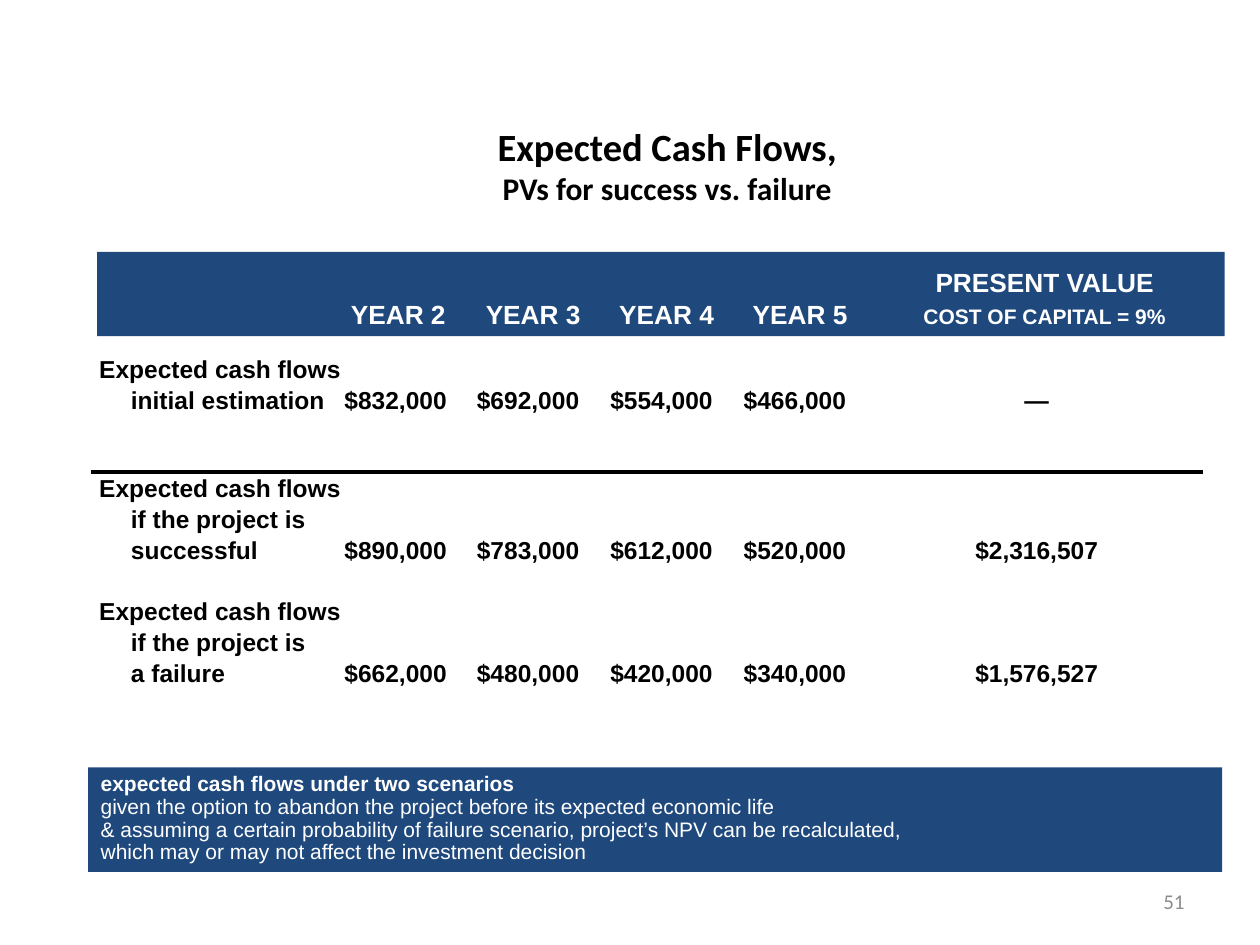
from lxml import etree
from pptx import Presentation
from pptx.dml.color import RGBColor
from pptx.enum.shapes import MSO_CONNECTOR, MSO_SHAPE
from pptx.enum.text import MSO_ANCHOR, PP_ALIGN
from pptx.oxml.ns import qn
from pptx.util import Cm, Pt

RECTANGLE, STRAIGHT = MSO_SHAPE.RECTANGLE, MSO_CONNECTOR.STRAIGHT
TOP, MIDDLE = MSO_ANCHOR.TOP, MSO_ANCHOR.MIDDLE
LEFT, CENTER, RIGHT = PP_ALIGN.LEFT, PP_ALIGN.CENTER, PP_ALIGN.RIGHT
NAVY, WHITE, BLACK, GREY = "1F497D", "FFFFFF", "000000", "8C8C8C"


def add_span(para, text, size, color, bold=True, font="Arial"):
    span = para.add_run()
    span.text = text
    span.font.name, span.font.size, span.font.bold = font, Pt(size), bold
    span.font.color.rgb = RGBColor.from_string(color)


def set_tabs(para, stops):
    tab_list = etree.SubElement(para._p.get_or_add_pPr(), qn("a:tabLst"))
    for position, align in stops:
        etree.SubElement(tab_list, qn("a:tab"), pos=str(Cm(position)), algn=align)


deck = Presentation()
deck.slide_width, deck.slide_height = Cm(25.4), Cm(19.05)
page = deck.slides.add_slide(deck.slide_layouts[6])

# Navy bands behind the column heads and the closing note
bands = []
for left, top, width, height in [(1.96, 5.08, 22.73, 1.7), (1.78, 15.47, 22.86, 2.11)]:
    band = page.shapes.add_shape(RECTANGLE, Cm(left), Cm(top), Cm(width), Cm(height))
    band.shadow.inherit = False
    band.fill.solid()
    band.fill.fore_color.rgb = RGBColor.from_string(NAVY)
    band.line.fill.background()
    bands.append(band)

# Text frames: title, page number, column heads, cash flow rows
frames = []
for left, top, width, height, anchor in [
    (2.11, 2.34, 22.68, 1.96, MIDDLE),
    (18.21, 17.65, 5.92, 1.02, MIDDLE),
    (0.64, 5.21, 23.95, 1.57, TOP),
    (1.75, 6.71, 22.91, 7.37, TOP),
]:
    box = page.shapes.add_textbox(Cm(left), Cm(top), Cm(width), Cm(height))
    box.text_frame.word_wrap = True
    box.text_frame.vertical_anchor = anchor
    frames.append(box.text_frame)
title, number, heads, rows = frames

# Title and page number
para = title.paragraphs[0]
para.alignment = CENTER
add_span(para, "Expected Cash Flows,", 22, BLACK, font="Calibri")
para.add_line_break()
add_span(para, "PVs for success vs. failure", 18, BLACK, font="Calibri")
para = number.paragraphs[0]
para.alignment = RIGHT
add_span(para, "51", 12, GREY, bold=False, font="Calibri")

# Column heads, centred on tab stops
head_stops = [(position, "ctr") for position in (1.3, 7.14, 9.86, 12.55, 15.24, 20.17)]
years = "".join(f"\tYEAR {year}" for year in range(2, 6))
head_lines = [
    [("\t", 16), ("\t\t\t\t\tPRESENT VALUE", 15)],
    [("\t" + years + "\t", 15), ("COST OF CAPITAL = 9%", 12)],
]
for index, spans in enumerate(head_lines):
    para = heads.add_paragraph() if index else heads.paragraphs[0]
    set_tabs(para, head_stops)
    for text, size in spans:
        add_span(para, text, size, WHITE)

# Cash flow rows: label lines, figures, line spacing of the first line, gap above
row_stops = [(0.64, "l"), (7.01, "r"), (9.68, "r"), (12.37, "r"), (15.06, "r"), (18.9, "ctr")]
scenarios = [
    (["initial estimation"],
     ["$832,000", "$692,000", "$554,000", "$466,000", "—"], 1.5, 0),
    (["if the project is", "successful"],
     ["$890,000", "$783,000", "$612,000", "$520,000", "$2,316,507"], 1.05, 33),
    (["if the project is", "a failure"],
     ["$662,000", "$480,000", "$420,000", "$340,000", "$1,576,527"], 1.05, 17.5),
]
para = rows.paragraphs[0]
for labels, figures, first_spacing, gap in scenarios:
    lines = ["Expected cash flows"] + ["\t" + label for label in labels]
    lines[-1] += "\t" + "\t".join(figures)
    for index, line in enumerate(lines):
        if para is None:
            para = rows.add_paragraph()
        para.line_spacing = 1.05 if index else first_spacing
        para.space_before = Pt(0 if index else gap)
        set_tabs(para, row_stops)
        add_span(para, line, 14, BLACK)
        para = None

# Rule under the initial estimation
rule = page.shapes.add_connector(STRAIGHT, Cm(24.26), Cm(9.52), Cm(1.83), Cm(9.52))
rule.line.color.rgb = RGBColor.from_string(BLACK)
rule.line.width = Pt(2.25)
etree.SubElement(rule._element.spPr, qn("a:effectLst"))

# Closing note
note = bands[1].text_frame
note.word_wrap = True
note.vertical_anchor = TOP
para = note.paragraphs[0]
para.alignment = LEFT
para.line_spacing = 0.9
add_span(para, "expected cash flows under two scenarios", 12, WHITE)
for line in [
    "given the option to abandon the project before its expected economic life",
    "& assuming a certain probability of failure scenario, project’s NPV can be recalculated,",
    "which may or may not affect the investment decision",
]:
    para.add_line_break()
    add_span(para, line, 12, WHITE, bold=False)

deck.save("out.pptx")
